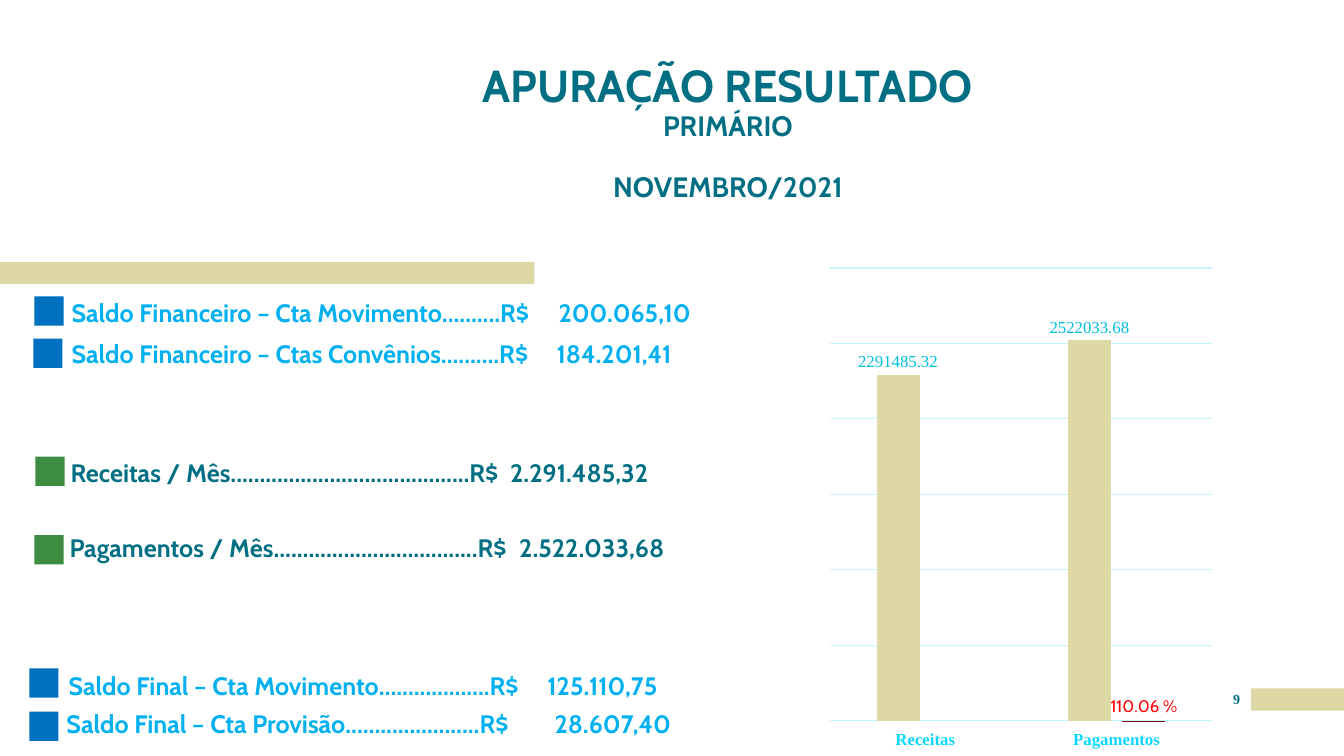
from lxml.etree import SubElement
from pptx import Presentation
from pptx.chart.data import CategoryChartData
from pptx.dml.color import RGBColor
from pptx.enum.chart import XL_CHART_TYPE, XL_LABEL_POSITION, XL_TICK_LABEL_POSITION, XL_TICK_MARK
from pptx.enum.shapes import MSO_SHAPE
from pptx.enum.text import MSO_ANCHOR, PP_ALIGN
from pptx.oxml.ns import qn
from pptx.util import Pt

PX = 9144
SAND = RGBColor(0xDE, 0xD8, 0xA4)
TEAL = RGBColor(0x00, 0x6F, 0x83)
SKY = RGBColor(0x00, 0xB0, 0xF0)
BLUE = RGBColor(0x00, 0x70, 0xC0)
GREEN = RGBColor(0x3D, 0x8C, 0x41)
CYAN = RGBColor(0x09, 0xD9, 0xFF)
LABEL = RGBColor(0x00, 0xBF, 0xE2)
GRID = RGBColor(0xC6, 0xF6, 0xFF)
MAROON = RGBColor(0x79, 0x00, 0x00)
RED = RGBColor(0xFF, 0x00, 0x00)
SANS = "Cabin"
SERIF = "Times New Roman"
MARKER = 29


class Deck:
    """Builds slide elements from pixel lengths at 100 px to the inch."""

    def __init__(self, width, height):
        self.prs = Presentation()
        self.prs.slide_width, self.prs.slide_height = width * PX, height * PX
        self.s = self.prs.slides.add_slide(self.prs.slide_layouts[6])

    def box(self, *at):
        return [v * PX for v in at]

    def style(self, font, size, color, bold=False, name=SANS):
        font.name, font.size, font.bold = name, Pt(size), bold
        font.color.rgb = color

    def rect(self, x, y, w, h, color):
        sp = self.s.shapes.add_shape(MSO_SHAPE.RECTANGLE, *self.box(x, y, w, h))
        sp.shadow.inherit = False
        sp.fill.solid()
        sp.fill.fore_color.rgb = color
        sp.line.fill.background()

    def frame(self, x, y, w, h, anchor, bottom=0):
        tf = self.s.shapes.add_textbox(*self.box(x, y, w, h)).text_frame
        tf.word_wrap = True
        tf.vertical_anchor = anchor
        tf.margin_left = tf.margin_top = tf.margin_right = 0
        tf.margin_bottom = bottom * PX
        return tf

    def run(self, p, text, size, color, name=SANS):
        r = p.add_run()
        r.text = text
        self.style(r.font, size, color, True, name)

    def title(self, at, lines):
        tf = self.frame(*at, MSO_ANCHOR.BOTTOM, bottom=34)
        for i, (text, size, before) in enumerate(lines):
            p = tf.add_paragraph() if i else tf.paragraphs[0]
            p.alignment = PP_ALIGN.CENTER
            p.line_spacing = 0.9
            p.space_before = Pt(before)
            self.run(p, text, size, TEAL)

    def balance(self, marker, at, text, amount, tab, fill, color):
        self.rect(*marker, MARKER, MARKER, fill)
        p = self.frame(*at, MSO_ANCHOR.BOTTOM).paragraphs[0]
        p.line_spacing = 0.9
        p.space_before = Pt(6)
        tabs = SubElement(p._p.get_or_add_pPr(), qn("a:tabLst"))
        SubElement(tabs, qn("a:tab"), pos=str(tab * PX), algn="l")
        self.run(p, f"{text}\t{amount}", 18, color)

    def page_number(self, at, number):
        p = self.frame(*at, MSO_ANCHOR.TOP).paragraphs[0]
        p.alignment = PP_ALIGN.CENTER
        self.run(p, number, 10, TEAL, SERIF)

    def chart(self, at, cats, series, plot_area):
        data = CategoryChartData()
        data.categories = cats
        for name, vals, *_ in series:
            data.add_series(name, vals)
        ch = self.s.shapes.add_chart(XL_CHART_TYPE.COLUMN_CLUSTERED, *self.box(*at), data).chart
        ch.has_title = ch.has_legend = False
        self.style(ch.font, 10, TEAL, name=SERIF)
        plot = ch.plots[0]
        plot.vary_by_categories = False
        plot.gap_width, plot.overlap = 219, -27
        for ser, (_, _, fill, color, name, fmt) in zip(plot.series, series):
            ser.format.fill.solid()
            ser.format.fill.fore_color.rgb = fill
            dl = ser.data_labels
            dl.show_value = True
            dl.position = XL_LABEL_POSITION.OUTSIDE_END
            dl.number_format, dl.number_format_is_linked = fmt, False
            self.style(dl.font, 12, color, name=name)
        cat, val = ch.category_axis, ch.value_axis
        cat.major_tick_mark = XL_TICK_MARK.NONE
        cat.tick_label_position = XL_TICK_LABEL_POSITION.LOW
        self.style(cat.tick_labels.font, 12, CYAN, True, SERIF)
        val.visible = False
        val.minimum_scale, val.maximum_scale, val.major_unit = 0, 3000000, 500000
        val.has_major_gridlines = True
        for line in (cat.format.line, val.major_gridlines.format.line):
            line.color.rgb = GRID
            line.width = Pt(0.75)
        self.place_plot(ch, plot_area)

    def place_plot(self, ch, plot_area):
        area = ch._chartSpace.chart.plotArea
        for old in area.findall(qn("c:layout")):
            area.remove(old)
        layout = SubElement(area, qn("c:layout"))
        area.insert(0, layout)
        manual = SubElement(layout, qn("c:manualLayout"))
        values = [("layoutTarget", "inner"), ("xMode", "edge"), ("yMode", "edge")]
        for tag, value in values + list(zip("xywh", plot_area)):
            SubElement(manual, qn(f"c:{tag}"), val=str(value))


def main():
    d = Deck(1333, 750)
    d.rect(1241, 683, 92, 22, SAND)
    d.rect(0, 260, 530, 22, SAND)
    d.title((405, 11, 634, 225), [
        ("APURAÇÃO RESULTADO", 32, 0),
        ("PRIMÁRIO", 20, 0),
        ("NOVEMBRO/2021", 20, 22),
    ])
    balances = [
        ((34, 294), (71, 287, 806, 38), "Saldo Financeiro – Cta Movimento..........R$", "200.065,10", 483, BLUE, SKY),
        ((33, 336), (71, 328, 779, 38), "Saldo Financeiro – Ctas Convênios..........R$", "184.201,41", 481, BLUE, SKY),
        ((35, 453), (70, 446, 732, 38), "Receitas / Mês.........................................R$", "2.291.485,32", 436, GREEN, TEAL),
        ((34, 531), (69, 520, 740, 38), "Pagamentos / Mês...................................R$", "2.522.033,68", 446, GREEN, TEAL),
        ((29, 663), (68, 650, 743, 45), "Saldo Final – Cta Movimento...................R$", "125.110,75", 475, BLUE, SKY),
        ((29, 706), (66, 695, 773, 38), "Saldo Final – Cta Provisão.......................R$", "28.607,40", 484, BLUE, SKY),
    ]
    for row in balances:
        d.balance(*row)
    d.chart((744, 251, 493, 499), ["Receitas", "Pagamentos"], [
        ("Series 1", (2291485.32, 2522033.68), SAND, LABEL, SERIF, "0.00"),
        ("Series 2", (None, 110.06), MAROON, RED, SANS, '0.00" %"'),
    ], (0.16, 0.03, 0.77, 0.9))
    d.page_number((1212, 685, 29, 25), "9")
    d.prs.save("out.pptx")


if __name__ == "__main__":
    main()
